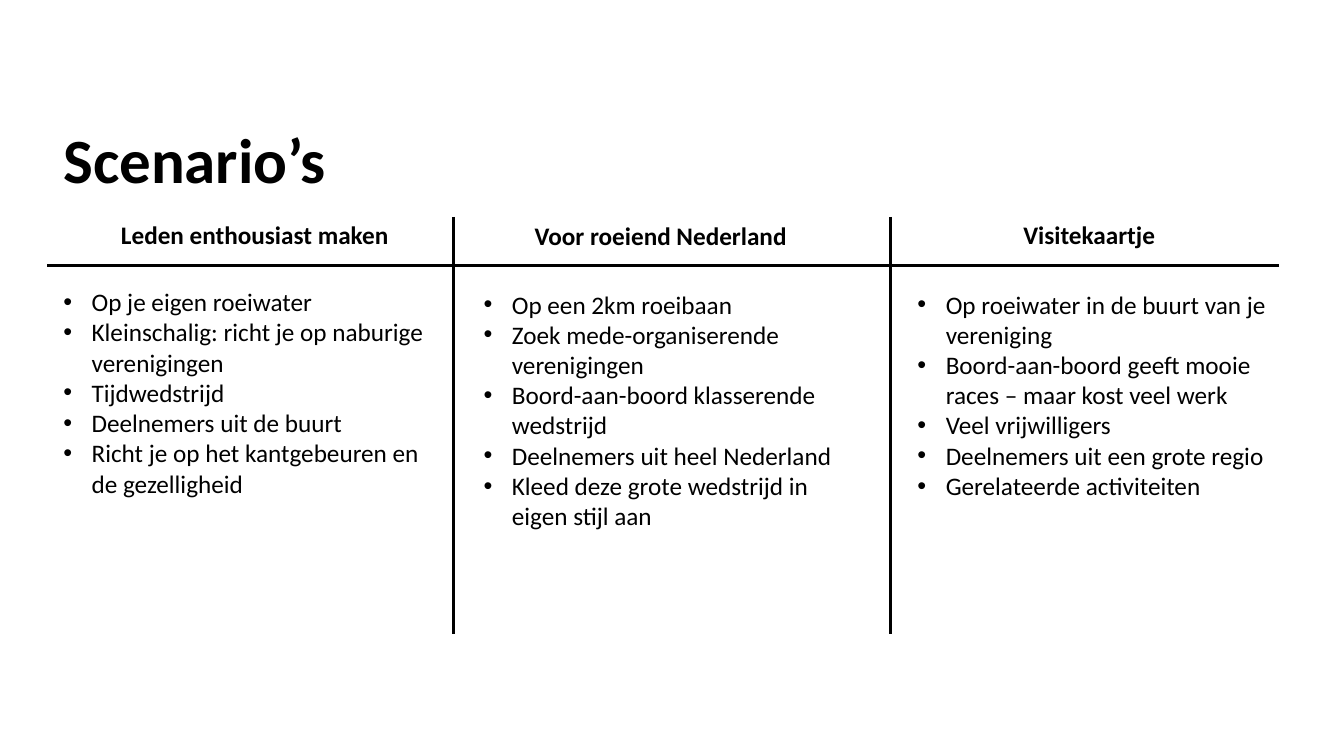
"""Build a slide that compares three scenarios for a rowing event."""
import pptx
import pptx.dml.color
import pptx.enum.shapes
import pptx.enum.text
import pptx.oxml.ns
import pptx.util
from lxml import etree

Cm = pptx.util.Cm
Pt = pptx.util.Pt
ALIGN = pptx.enum.text.PP_ALIGN
BLACK = pptx.dml.color.RGBColor(0, 0, 0)
FONT = "Calibri"

TITLE = "Scenario’s"
COLS = [
    {
        "head": "Leden enthousiast maken",
        "spot": (1.88, 7.26),
        "list": (1.88, 9.5, 8.46),
        "items": [
            "Op je eigen roeiwater",
            "Kleinschalig: richt je op naburige verenigingen",
            "Tijdwedstrijd",
            "Deelnemers uit de buurt",
            "Richt je op het kantgebeuren en de gezelligheid",
        ],
    },
    {
        "head": "Voor roeiend Nederland",
        "spot": (15.52, 7.29),
        "list": (16, 9.58, 10.52),
        "items": [
            "Op een 2km roeibaan",
            "Zoek mede-organiserende verenigingen",
            "Boord-aan-boord klasserende wedstrijd",
            "Deelnemers uit heel Nederland",
            "Kleed deze grote wedstrijd in eigen stijl aan",
        ],
    },
    {
        "head": "Visitekaartje",
        "spot": (29.92, 7.24),
        "list": (30.58, 9.58, 9.5),
        "items": [
            "Op roeiwater in de buurt van je vereniging",
            "Boord-aan-boord geeft mooie races – maar kost veel werk",
            "Veel vrijwilligers",
            "Deelnemers uit een grote regio",
            "Gerelateerde activiteiten",
        ],
    },
]
RULES = [
    (29.92, 7.29, 29.92, 21.31),
    (15.24, 7.29, 15.24, 21.31),
    (42.98, 8.92, 1.57, 8.92),
]
HEAD_W, HEAD_H = 13.36, 1.27
LIST_W = 13.11
INDENT = Cm(0.95)


def add_text(slide, lines, area, size=24, bold=False, align=ALIGN.LEFT,
             bullet=False):
    """Add a text box with one paragraph for each line."""
    frame = slide.shapes.add_textbox(*map(Cm, area)).text_frame
    frame.word_wrap = True
    frame.auto_size = pptx.enum.text.MSO_AUTO_SIZE.SHAPE_TO_FIT_TEXT
    for i, line in enumerate(lines):
        para = frame.add_paragraph() if i else frame.paragraphs[0]
        para.alignment = align
        if bullet:
            props = para._p.get_or_add_pPr()
            props.set("marL", str(INDENT))
            props.set("indent", str(-INDENT))
            tag = pptx.oxml.ns.qn
            etree.SubElement(props, tag("a:buFont"), typeface="Arial")
            etree.SubElement(props, tag("a:buChar"), char="•")
        run = para.add_run()
        run.text = line
        run.font.name = FONT
        run.font.size = Pt(size)
        run.font.bold = bold
        run.font.color.rgb = BLACK


def add_rule(slide, ends):
    """Add a straight black line."""
    kind = pptx.enum.shapes.MSO_CONNECTOR.STRAIGHT
    rule = slide.shapes.add_connector(kind, *map(Cm, ends))
    rule.line.color.rgb = BLACK
    rule.line.width = Pt(3)
    etree.SubElement(rule._element.spPr, pptx.oxml.ns.qn("a:effectLst"))


def main():
    """Lay out the slide and save it."""
    deck = pptx.Presentation()
    deck.slide_width, deck.slide_height = Cm(45.16), Cm(25.4)
    slide = deck.slides.add_slide(deck.slide_layouts[6])
    add_text(slide, [TITLE], (1.88, 3.91, 40.64, 2.82), size=60, bold=True)
    for ends in RULES:
        add_rule(slide, ends)
    for col in COLS:
        add_text(slide, [col["head"]], (*col["spot"], HEAD_W, HEAD_H),
                 bold=True, align=ALIGN.CENTER)
        left, top, high = col["list"]
        add_text(slide, col["items"], (left, top, LIST_W, high), bullet=True)
    deck.save("out.pptx")


if __name__ == "__main__":
    main()
